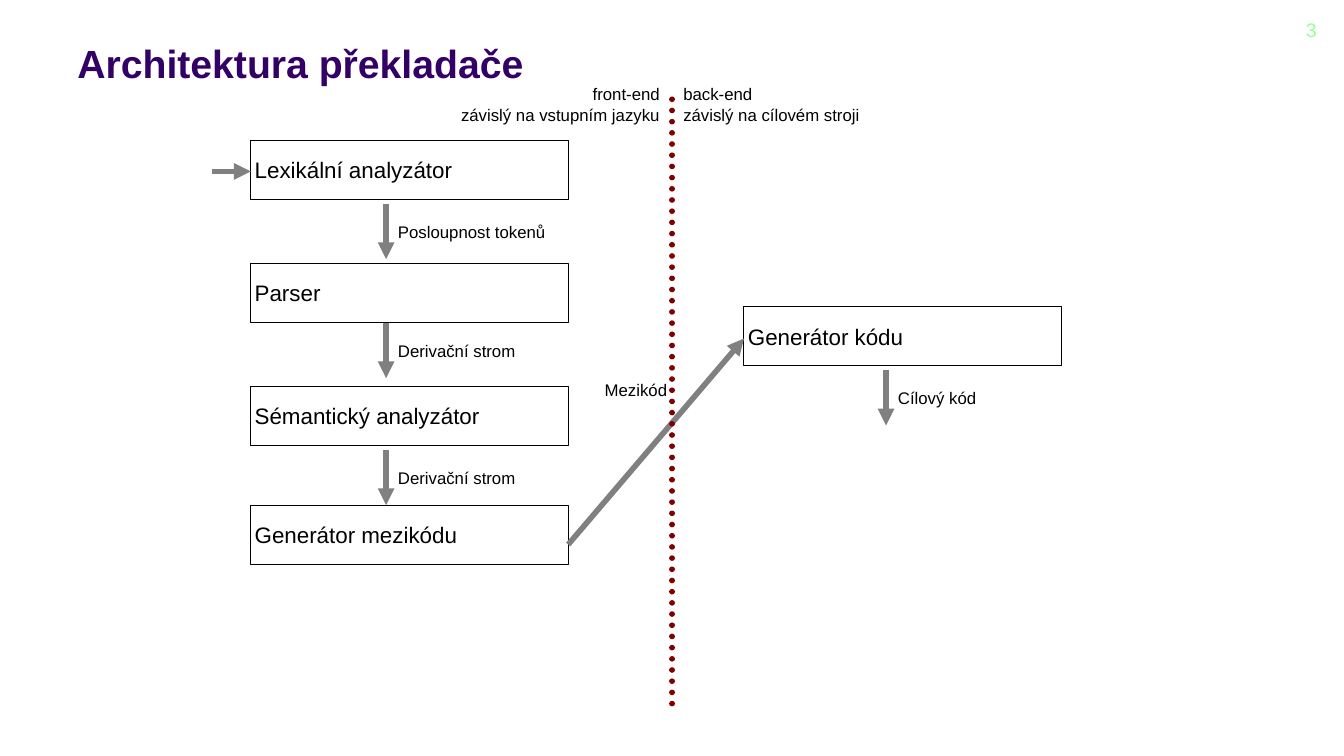
from lxml import etree
from pptx import Presentation
from pptx.dml.color import RGBColor
from pptx.enum import dml, shapes, text
from pptx.oxml import ns
from pptx.util import Cm, Pt

COLORS = {
    "title": "330066",
    "number": "99FF99",
    "ink": "000000",
    "paper": "FFFFFF",
    "arrow": "808080",
    "divider": "800000",
}
BOX_W, BOX_H = 8, 1.5
LABEL_H = 1
FLOW_LENGTH = 1.4
LABEL_GAP = 0.2
FRONT_X, BACK_X = 6.32, 18.75
FRONT_ARROW_X, BACK_ARROW_X = 9.73, 22.33

FRONT_STAGES = [
    ("Lexikální analyzátor", 3.53),
    ("Parser", 6.63),
    ("Sémantický analyzátor", 9.73),
    ("Generátor mezikódu", 12.73),
]
FLOWS = [
    ("Posloupnost tokenů", FRONT_ARROW_X, 5.13, 4.6),
    ("Derivační strom", FRONT_ARROW_X, 8.13, 4.6),
    ("Derivační strom", FRONT_ARROW_X, 11.33, 4.6),
    ("Cílový kód", BACK_ARROW_X, 9.32, 6),
]


def rgb(name):
    return RGBColor.from_string(COLORS[name])


def write(sp, content, size, color="ink", bold=False, align=text.PP_ALIGN.LEFT,
          anchor=text.MSO_ANCHOR.MIDDLE, inset=0.1):
    """Fill a shape's text frame, one paragraph for each line of content."""
    tf = sp.text_frame
    tf.word_wrap = True
    tf.vertical_anchor = anchor
    tf.margin_left = tf.margin_right = Cm(inset)
    tf.margin_top = tf.margin_bottom = Cm(min(inset, 0.13))
    tf.text = content
    for p in tf.paragraphs:
        p.alignment = align
        p.font.name = "Arial"
        p.font.size = Pt(size)
        p.font.bold = bold
        p.font.color.rgb = rgb(color)


def add_text(s, content, x, y, w, h=LABEL_H, size=12, **style):
    write(s.shapes.add_textbox(Cm(x), Cm(y), Cm(w), Cm(h)), content, size, **style)


def add_stage(s, name, x, y):
    sp = s.shapes.add_shape(shapes.MSO_SHAPE.RECTANGLE,
                            Cm(x), Cm(y), Cm(BOX_W), Cm(BOX_H))
    sp.shadow.inherit = False
    sp.fill.solid()
    sp.fill.fore_color.rgb = rgb("paper")
    sp.line.color.rgb = rgb("ink")
    sp.line.width = Pt(0.75)
    write(sp, name, 16)


def add_line(s, x1, y1, x2, y2, color):
    line = s.shapes.add_connector(shapes.MSO_CONNECTOR.STRAIGHT,
                                  Cm(x1), Cm(y1), Cm(x2), Cm(y2))
    line.line.color.rgb = rgb(color)
    line.line.width = Pt(4)
    etree.SubElement(line._element.spPr, ns.qn("a:effectLst"))
    return line


def add_arrow(s, x1, y1, x2, y2):
    line = add_line(s, x1, y1, x2, y2, "arrow")
    ln = line.line._get_or_add_ln()
    etree.SubElement(ln, ns.qn("a:tailEnd"), type="triangle")


def add_divider(s, x, top, bottom):
    line = add_line(s, x, bottom, x, top, "divider")
    line.line.dash_style = dml.MSO_LINE.ROUND_DOT
    line.line._get_or_add_ln().set("cap", "rnd")


def add_flow(s, label, x, y, label_w):
    """Draw a downward arrow with the name of what it carries beside it."""
    add_arrow(s, x, y, x, y + FLOW_LENGTH)
    add_text(s, label, x + LABEL_GAP, y + LABEL_GAP, label_w)


def main():
    prs = Presentation()
    prs.slide_width, prs.slide_height = Cm(33.87), Cm(19.05)
    s = prs.slides.add_slide(prs.slide_layouts[6])

    add_text(s, "Architektura překladače", 1.7, 0.33, 27.94, 1.98, size=28,
             color="title", bold=True, anchor=text.MSO_ANCHOR.BOTTOM, inset=0.25)
    add_text(s, "3 ", 31.72, 0.33, 1.85, 1.27, size=14, color="number",
             align=text.PP_ALIGN.RIGHT, anchor=text.MSO_ANCHOR.TOP, inset=0.25)

    for name, y in FRONT_STAGES:
        add_stage(s, name, FRONT_X, y)
    add_stage(s, "Generátor kódu", BACK_X, 7.72)

    add_arrow(s, 5.33, 4.32, FRONT_X, 4.32)
    for flow in FLOWS:
        add_flow(s, *flow)
    add_arrow(s, FRONT_X + BOX_W, 13.72, BACK_X, 8.53)
    add_text(s, "Mezikód", 15.14, 9.32, 2.8)

    add_divider(s, 16.94, 2.31, 17.73)
    add_text(s, "front-end\nzávislý na vstupním jazyku", 11.13, 2.13, 5.6,
             align=text.PP_ALIGN.RIGHT)
    add_text(s, "back-end\nzávislý na cílovém stroji", 17.12, 2.13, 5.2)

    prs.save("out.pptx")


if __name__ == "__main__":
    main()
